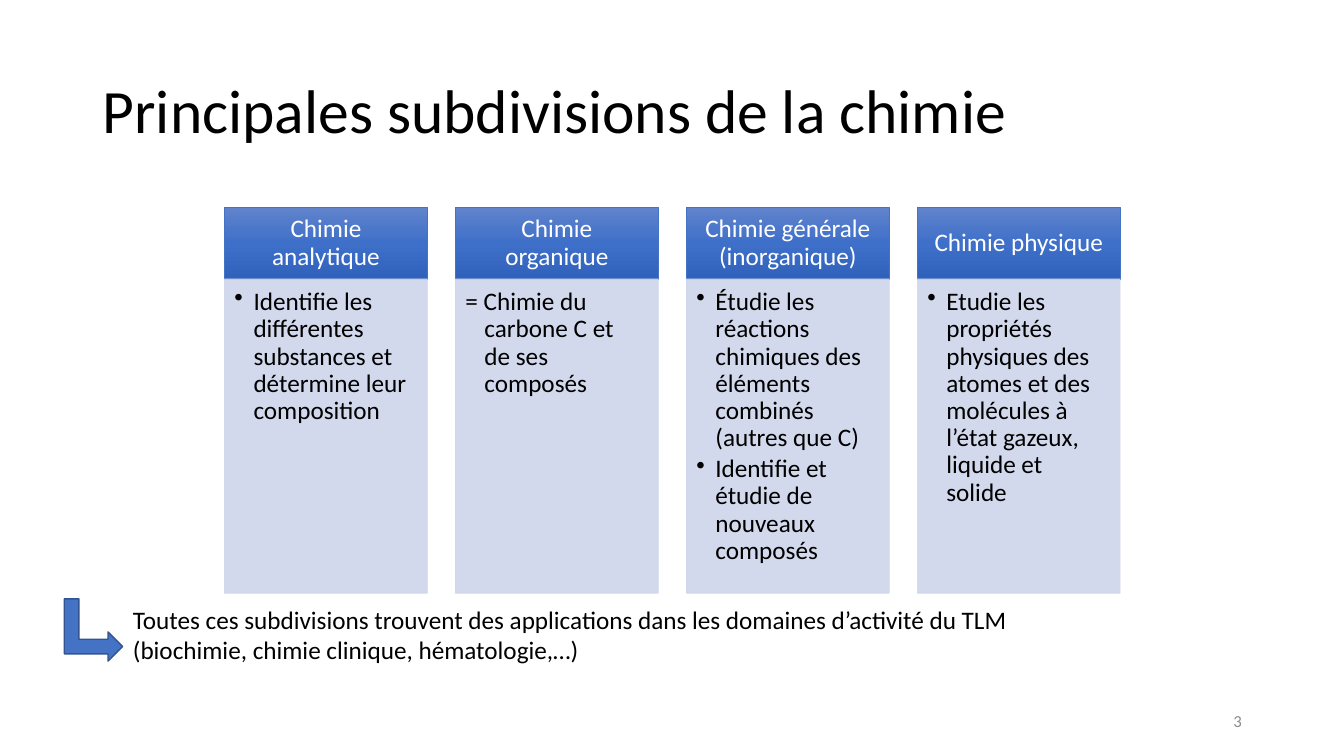
"""Builds the slide on the main subdivisions of chemistry."""
from copy import deepcopy

from lxml import etree
from pptx import Presentation
from pptx.dml.color import RGBColor
from pptx.enum.shapes import MSO_SHAPE
from pptx.enum.text import MSO_ANCHOR, MSO_AUTO_SIZE, PP_ALIGN
from pptx.oxml.ns import qn
from pptx.util import Cm, Pt

RECTANGLE, BENT_ARROW = MSO_SHAPE.RECTANGLE, MSO_SHAPE.BENT_UP_ARROW
TOP, MIDDLE = MSO_ANCHOR.TOP, MSO_ANCHOR.MIDDLE
LEFT, CENTER, RIGHT = PP_ALIGN.LEFT, PP_ALIGN.CENTER, PP_ALIGN.RIGHT

WHITE = RGBColor(0xFF, 0xFF, 0xFF)
BLACK = RGBColor(0x00, 0x00, 0x00)
GREY = RGBColor(0x8C, 0x8C, 0x8C)
BLUE = RGBColor(0x44, 0x72, 0xC4)
DARK_BLUE = RGBColor(0x32, 0x54, 0x91)
PALE_BLUE = RGBColor(0xCF, 0xD5, 0xEA)
HEADER_GRADIENT = [
    (0, RGBColor(0x61, 0x83, 0xCB)),
    (0.5, RGBColor(0x3E, 0x70, 0xCA)),
    (1, RGBColor(0x30, 0x62, 0xBB)),
]

SUBDIVISIONS = [
    ("Chimie analytique", True,
     ["Identifie les différentes substances et détermine leur composition"]),
    ("Chimie organique", False,
     ["= Chimie du carbone C et de ses composés"]),
    ("Chimie générale (inorganique)", True,
     ["Étudie les réactions chimiques des éléments combinés (autres que C)",
      "Identifie et étudie de nouveaux composés"]),
    ("Chimie physique", True,
     ["Etudie les propriétés physiques des atomes et des molécules à "
      "l’état gazeux, liquide et solide"]),
]
APPLICATIONS = [
    "Toutes ces subdivisions trouvent des applications dans les domaines d’activité du TLM",
    "(biochimie, chimie clinique, hématologie,…)",
]
COLUMN_LEFT, COLUMN_STEP, COLUMN_WIDTH = 5.66, 5.82, 5.11
HEADER_TOP, HEADER_HEIGHT, BODY_HEIGHT = 5.23, 1.8, 7.92


def write(shape, lines, size=18, color=BLACK, align=LEFT, anchor=TOP, spacing=1.0,
          after=0, insets=(0.25, 0.13, 0.25, 0.13), hanging=0, bullet=False):
    """Fill a shape with one formatted paragraph per line."""
    frame = shape.text_frame
    frame.word_wrap = True
    frame.auto_size = MSO_AUTO_SIZE.NONE
    frame.vertical_anchor = anchor
    (frame.margin_left, frame.margin_top,
     frame.margin_right, frame.margin_bottom) = [Cm(inset) for inset in insets]
    frame.text = "\n".join(lines)
    for paragraph in frame.paragraphs:
        paragraph.alignment = align
        paragraph.line_spacing = spacing
        paragraph.space_before = Pt(0)
        paragraph.space_after = Pt(after)
        for run in paragraph.runs:
            run.font.name = "Calibri"
            run.font.size = Pt(size)
            run.font.color.rgb = color
        if hanging:
            properties = paragraph._p.get_or_add_pPr()
            properties.set("marL", str(Cm(hanging)))
            properties.set("indent", str(-Cm(hanging)))
            if bullet:
                etree.SubElement(properties, qn("a:buChar")).set("char", "•")


def add_box(kind, left, top, width, height, line_color, line_width):
    """Add a preset shape with a plain outline and no shadow."""
    shape = slide.shapes.add_shape(kind, Cm(left), Cm(top), Cm(width), Cm(height))
    shape.shadow.inherit = False
    shape.line.color.rgb = line_color
    shape.line.width = Pt(line_width)
    return shape


presentation = Presentation()
presentation.slide_width = Cm(33.87)
presentation.slide_height = Cm(19.05)
slide = presentation.slides.add_slide(presentation.slide_layouts[5])

title = slide.shapes.title
title.left, title.top, title.width, title.height = Cm(2.34), Cm(1.02), Cm(29.21), Cm(3.68)
write(title, ["Principales subdivisions de la chimie"], size=44, anchor=MIDDLE, spacing=0.9)

for index, (name, bulleted, descriptions) in enumerate(SUBDIVISIONS):
    left = COLUMN_LEFT + index * COLUMN_STEP

    header = add_box(RECTANGLE, left, HEADER_TOP, COLUMN_WIDTH, HEADER_HEIGHT, BLUE, 0.5)
    header.fill.gradient()
    header.fill.gradient_angle = 270
    stop_list = header._element.spPr.find(qn("a:gradFill")).find(qn("a:gsLst"))
    stop_list.insert(1, deepcopy(stop_list[0]))
    for stop, (position, color) in zip(header.fill.gradient_stops, HEADER_GRADIENT):
        stop.position = position
        stop.color.rgb = color
    write(header, [name], color=WHITE, align=CENTER, anchor=MIDDLE, spacing=0.9,
          after=6.3, insets=(0.36, 0.2, 0.36, 0.2))

    body = add_box(RECTANGLE, left, HEADER_TOP + HEADER_HEIGHT, COLUMN_WIDTH, BODY_HEIGHT,
                   PALE_BLUE, 0.5)
    body.fill.solid()
    body.fill.fore_color.rgb = PALE_BLUE
    for color_element in body._element.spPr.iter(qn("a:srgbClr")):
        etree.SubElement(color_element, qn("a:alpha")).set("val", "90000")
    write(body, descriptions, spacing=0.9, after=2.7, insets=(0.25, 0.25, 0.36, 0.41),
          hanging=0.48, bullet=bulleted)

arrow = add_box(BENT_ARROW, 1.57, 15.14, 1.57, 1.47, DARK_BLUE, 1)
arrow.rotation = 90
arrow.fill.solid()
arrow.fill.fore_color.rgb = BLUE

applications = slide.shapes.add_textbox(Cm(3.1), Cm(15.09), Cm(29.31), Cm(1.8))
write(applications, APPLICATIONS)

slide_number = slide.shapes.add_textbox(Cm(23.93), Cm(17.65), Cm(7.62), Cm(1.02))
write(slide_number, ["3"], size=12, color=GREY, align=RIGHT, anchor=MIDDLE)

presentation.save("out.pptx")
